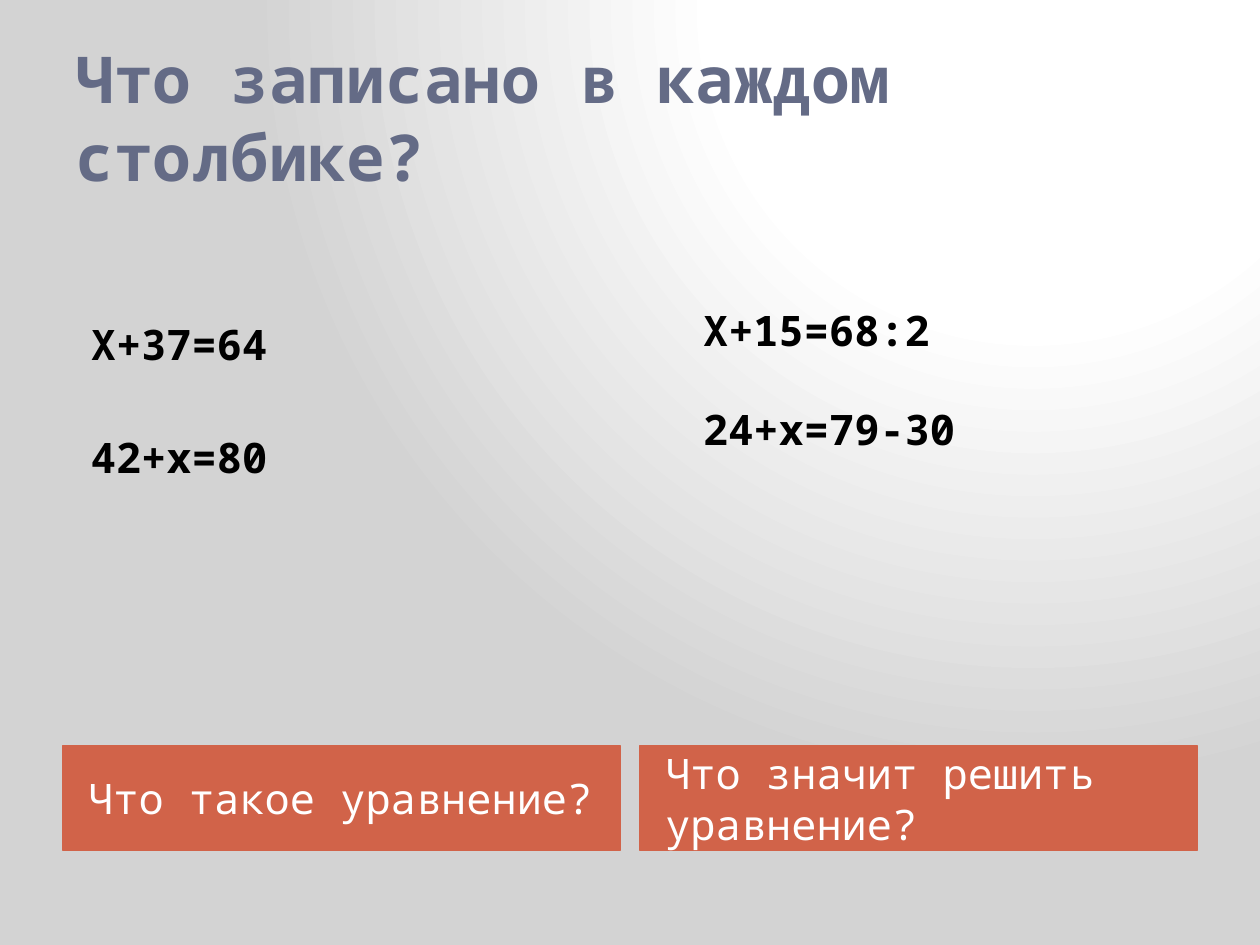
from lxml.etree import SubElement as Sub
from pptx import Presentation
from pptx.dml.color import RGBColor as Rgb
from pptx.enum.shapes import MSO_SHAPE as Kind
from pptx.enum.text import MSO_ANCHOR as Anchor, PP_ALIGN as Align
from pptx.oxml.ns import qn
from pptx.util import Pt

TITLE = "Что записано в каждом столбике?"
COLS = [
    {"sums": ["Х+37=64", "42+х=80"], "ask": "Что такое уравнение?",
     "left": 15.9, "top": 68, "gap": 36.2},
    {"sums": ["Х+15=68:2", "24+х=79-30"], "ask": "Что значит решить уравнение?",
     "left": 36, "top": 60, "gap": 28.2},
]
HUES = {"title": "646B86", "bar": "D16349", "ask": "FFFFFF", "sum": "000000"}
STOPS = [(0, "FFFFFF"), (40, "FFFFFF"), (100, "D3D3D3")]
FOCUS = {"l": 65, "t": 0, "r": 0, "b": 98}
FONT = "Noto Sans Mono"
EDGE, WIDE, STEP = 36, 318.24, 329.76


def shade(slide):
    slide.background.fill.gradient()
    grad = slide.element.find(".//" + qn("a:gradFill"))
    for part in list(grad):
        grad.remove(part)
    stops = Sub(grad, qn("a:gsLst"))
    for spot, hue in STOPS:
        stop = Sub(stops, qn("a:gs"), pos=str(spot * 1000))
        Sub(stop, qn("a:srgbClr"), val=hue)
    path = Sub(grad, qn("a:path"), path="circle")
    Sub(path, qn("a:fillToRect"), {k: str(v * 1000) for k, v in FOCUS.items()})


def write(shape, lines, size, hue, bold=False, gap=0):
    frame = shape.text_frame
    frame.word_wrap = True
    frame.text = "\n".join(lines)
    for i, para in enumerate(frame.paragraphs):
        para.alignment = Align.LEFT
        if i:
            para.space_before = Pt(gap)
        for run in para.runs:
            font = run.font
            font.name, font.size, font.bold = FONT, Pt(size), bold
            font.color.rgb = Rgb.from_string(HUES[hue])
    return frame


def build():
    deck = Presentation()
    deck.slide_width, deck.slide_height = Pt(720), Pt(540)
    slide = deck.slides.add_slide(deck.slide_layouts[6])
    shade(slide)
    shapes = slide.shapes

    head = shapes.add_textbox(Pt(EDGE), Pt(21.6), Pt(648), Pt(90))
    write(head, [TITLE], 36.9, "title", True).vertical_anchor = Anchor.MIDDLE

    for i, col in enumerate(COLS):
        x = Pt(EDGE + i * STEP)
        bar = shapes.add_shape(Kind.RECTANGLE, x, Pt(426.2), Pt(WIDE), Pt(59.8))
        bar.shadow.inherit = False
        bar.fill.solid()
        bar.fill.fore_color.rgb = Rgb.from_string(HUES["bar"])
        bar.line.color.rgb = Rgb.from_string(HUES["bar"])
        bar.line.width = Pt(0.75)
        frame = write(bar, [col["ask"]], 24, "ask")
        frame.vertical_anchor = Anchor.MIDDLE
        frame.margin_left = Pt(14.4)

        box = shapes.add_textbox(x, Pt(113.8), Pt(WIDE), Pt(310.3))
        frame = write(box, col["sums"], 24, "sum", True, col["gap"])
        frame.margin_left, frame.margin_top = Pt(col["left"]), Pt(col["top"])

    deck.save("out.pptx")


if __name__ == "__main__":
    build()
